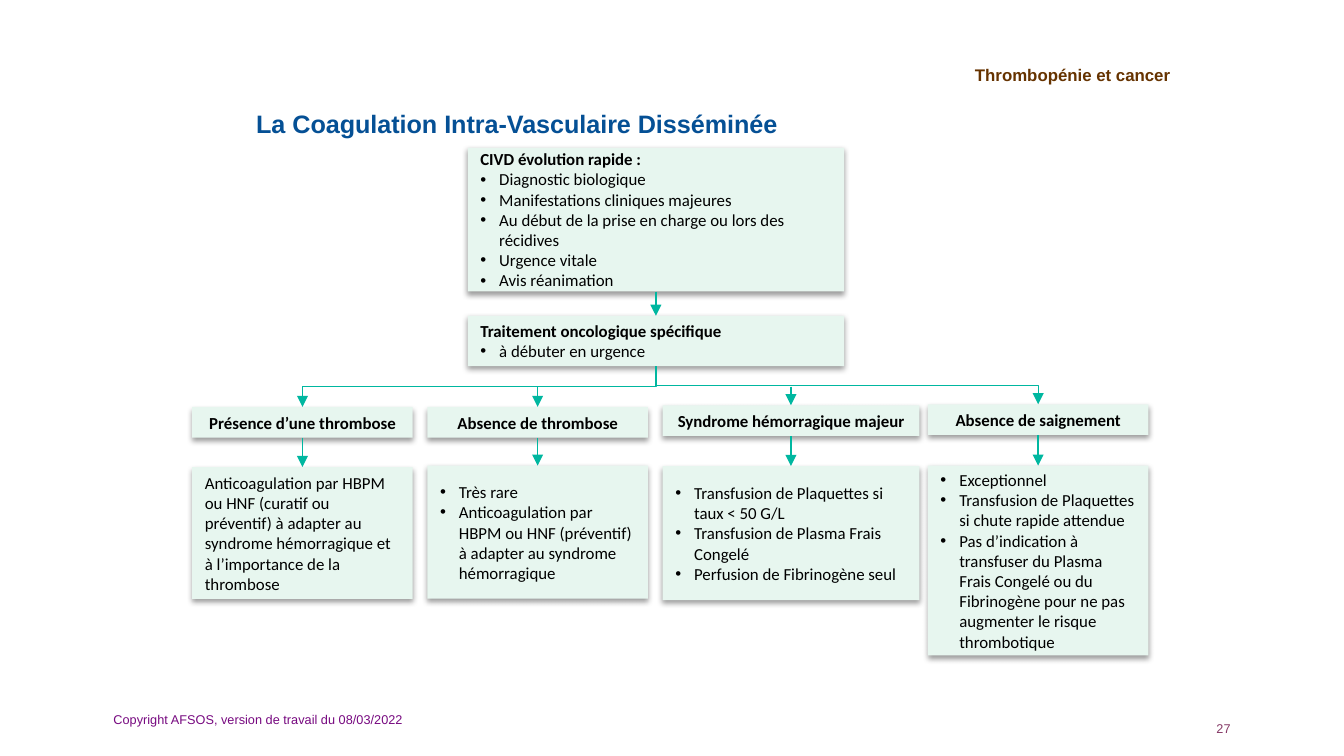
from lxml import etree
from pptx import Presentation
from pptx.dml.color import RGBColor
from pptx.enum.shapes import MSO_CONNECTOR, MSO_SHAPE
from pptx.enum.text import MSO_ANCHOR, MSO_AUTO_SIZE, PP_ALIGN
from pptx.oxml.ns import qn
from pptx.util import Pt

LEFT, CENTER, RIGHT = PP_ALIGN.LEFT, PP_ALIGN.CENTER, PP_ALIGN.RIGHT
TOP, MIDDLE = MSO_ANCHOR.TOP, MSO_ANCHOR.MIDDLE
STRAIGHT, ELBOW = MSO_CONNECTOR.STRAIGHT, MSO_CONNECTOR.ELBOW
SITE_TOP, SITE_BOTTOM = 0, 2

BLACK = RGBColor(0, 0, 0)
MINT = RGBColor(0xE7, 0xF6, 0xEF)
TEAL = RGBColor(0x00, 0xB7, 0xA0)
BLUE = RGBColor(0x05, 0x50, 0x95)
BROWN = RGBColor(0x66, 0x33, 0x00)
PURPLE = RGBColor(0x77, 0x09, 0x80)
PLUM = RGBColor(0x86, 0x39, 0x66)

# Content
TITLE = "La Coagulation Intra-Vasculaire Disséminée"
SECTION = "Thrombopénie et cancer"
COPYRIGHT = "Copyright AFSOS, version de travail du 08/03/2022"
PAGE = "27"

# Stacked boxes: top, height, heading, bullets
STEPS = [
    (79.2, 77, "CIVD évolution rapide :", [
        "Diagnostic biologique",
        "Manifestations cliniques majeures",
        "Au début de la prise en charge ou lors des récidives",
        "Urgence vitale",
        "Avis réanimation"]),
    (169.2, 27, "Traitement oncologique spécifique", ["à débuter en urgence"]),
]
# Branches: left, width, heading top, body top, body height, heading, bulleted, items
BRANCHES = [
    (103, 118.1, 218, 250.2, 70.6, "Présence d’une thrombose", False, [
        "Anticoagulation par HBPM ou HNF (curatif ou préventif) à adapter au "
        "syndrome hémorragique et à l’importance de la thrombose"]),
    (229, 118.1, 218, 249.5, 71.3, "Absence de thrombose", True, [
        "Très rare",
        "Anticoagulation par HBPM ou HNF (préventif) à adapter au syndrome "
        "hémorragique"]),
    (355, 137.5, 217.1, 249.7, 71.8, "Syndrome hémorragique majeur", True, [
        "Transfusion de Plaquettes si taux < 50 G/L",
        "Transfusion de Plasma Frais Congelé",
        "Perfusion de Fibrinogène seul"]),
    (497.1, 118.1, 216.6, 249.5, 101.7, "Absence de saignement", True, [
        "Exceptionnel",
        "Transfusion de Plaquettes si chute rapide attendue",
        "Pas d’indication à transfuser du Plasma Frais Congelé ou du "
        "Fibrinogène pour ne pas augmenter le risque thrombotique"]),
]
STEP_LEFT, STEP_WIDTH, HEAD_HEIGHT = 250.6, 201.6, 16.4
INSET, INDENT = 6.75, 10.1


def write(sp, lines, size, font, color, align=LEFT, anchor=MIDDLE):
    """Fill a shape with (text, bold, bulleted) lines."""
    tf = sp.text_frame
    tf.word_wrap, tf.auto_size, tf.vertical_anchor = True, MSO_AUTO_SIZE.NONE, anchor
    tf.margin_left = tf.margin_right = Pt(INSET)
    tf.margin_top = tf.margin_bottom = Pt(3.4)
    for i, (text, bold, bulleted) in enumerate(lines):
        p = tf.add_paragraph() if i else tf.paragraphs[0]
        p.text, p.alignment = text, align
        if bulleted:
            pPr = p._p.get_or_add_pPr()
            pPr.set("marL", str(Pt(INDENT)))
            pPr.set("indent", str(-Pt(INDENT)))
            etree.SubElement(pPr, qn("a:buFont"), typeface="Arial")
            etree.SubElement(pPr, qn("a:buChar"), char="•")
        for r in p.runs:
            r.font.size, r.font.name, r.font.bold = Pt(size), font, bold
            r.font.color.rgb = color


def add_box(left, top, width, height, lines, align=LEFT):
    sp = shapes.add_shape(MSO_SHAPE.RECTANGLE, Pt(left), Pt(top), Pt(width), Pt(height))
    sp.fill.solid()
    sp.fill.fore_color.rgb = MINT
    sp.line.fill.background()
    sp.shadow.inherit = False
    effects = sp._element.spPr.find(qn("a:effectLst"))
    shadow = etree.SubElement(effects, qn("a:outerShdw"), blurRad=str(Pt(3.1)),
                              dist=str(Pt(1.6)), dir="5400000", rotWithShape="0")
    color = etree.SubElement(shadow, qn("a:srgbClr"), val="000000")
    etree.SubElement(color, qn("a:alpha"), val="38000")
    write(sp, lines, 9, "Calibri", BLACK, align)
    return sp


def add_label(left, top, width, height, text, size, color, bold=False,
              align=LEFT, anchor=MIDDLE):
    sp = shapes.add_textbox(Pt(left), Pt(top), Pt(width), Pt(height))
    write(sp, [(text, bold, False)], size, "Arial", color, align, anchor)


def add_arrow(kind, x, y, target, source=None):
    """Arrow from (x, y), or the bottom of source, to the top of target."""
    cx = shapes.add_connector(kind, x, y, x, target.top)
    if source is not None:
        cx.begin_connect(source, SITE_BOTTOM)
    cx.end_connect(target, SITE_TOP)
    cx.line.color.rgb, cx.line.width = TEAL, Pt(0.75)
    etree.SubElement(cx.line._get_or_add_ln(), qn("a:tailEnd"), type="triangle")
    etree.SubElement(cx._element.spPr, qn("a:effectLst"))
    return cx


def mid_x(sp):
    return sp.left + sp.width // 2


def bottom(sp):
    return sp.top + sp.height


def join(source, target):
    return add_arrow(STRAIGHT, mid_x(source), bottom(source), target, source)


def join_elbow(source, target):
    """Elbow that leaves downwards: a turned connector around its centre."""
    cx = add_arrow(ELBOW, mid_x(source), bottom(source), target, source)
    x1, x2, y1, y2 = mid_x(source), mid_x(target), bottom(source), target.top
    drop, span = y2 - y1, abs(x2 - x1)
    cx.left, cx.top = (x1 + x2 - drop) // 2, (y1 + y2 - span) // 2
    cx.width, cx.height = drop, span
    xfrm = cx._element.spPr.find(qn("a:xfrm"))
    for flip in ("flipH", "flipV"):
        xfrm.attrib.pop(flip, None)
    xfrm.set("rot", str((90 if x2 < x1 else 270) * 60000))
    if x2 > x1:
        xfrm.set("flipH", "1")


prs = Presentation()
prs.slide_width, prs.slide_height = Pt(720), Pt(405)
slide = prs.slides.add_slide(prs.slide_layouts[5])
shapes = slide.shapes

# Title, section name, footer
title = shapes.title
title.left, title.top, title.width, title.height = Pt(130.5), Pt(41.2), Pt(459), Pt(49.5)
write(title, [(TITLE, True, False)], 13.5, "Arial", BLUE)
add_label(422.6, 24, 211, 32.4, SECTION, 9, BROWN, True, RIGHT)
add_label(516.2, 382.6, 149.8, 13.7, PAGE, 6.8, PLUM, align=RIGHT, anchor=TOP)
add_label(54, 374.6, 243.4, 21.6, COPYRIGHT, 6.8, PURPLE)

# Boxes
steps = [add_box(STEP_LEFT, top, STEP_WIDTH, height,
                 [(heading, True, False)] + [(item, False, True) for item in items])
         for top, height, heading, items in STEPS]
heads, bodies = [], []
for left, width, head_top, body_top, height, heading, bulleted, items in BRANCHES:
    heads.append(add_box(left, head_top, width, HEAD_HEIGHT,
                         [(heading, True, False)], CENTER))
    bodies.append(add_box(left, body_top, width, height,
                          [(item, False, bulleted) for item in items]))

# Arrows: outer branches bend, inner ones drop from the shared bar
treatment = steps[-1]
join(steps[0], treatment)
join_elbow(treatment, heads[0])
join_elbow(treatment, heads[-1])
bar_y = (bottom(treatment) + heads[0].top) // 2
for head in heads[1:-1]:
    add_arrow(STRAIGHT, mid_x(head), bar_y, head)
for head, body in zip(heads, bodies):
    join(head, body)

prs.save("out.pptx")
